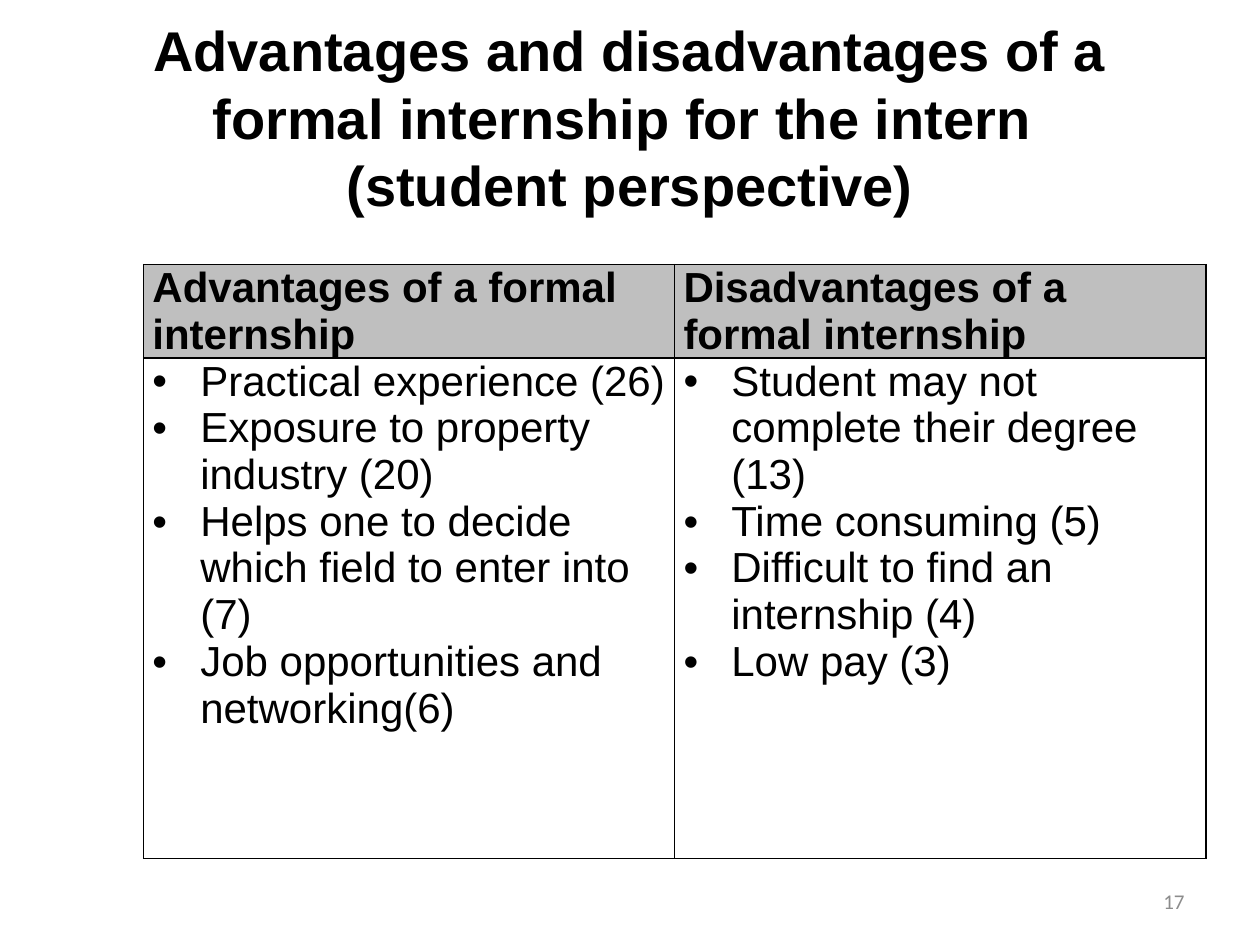
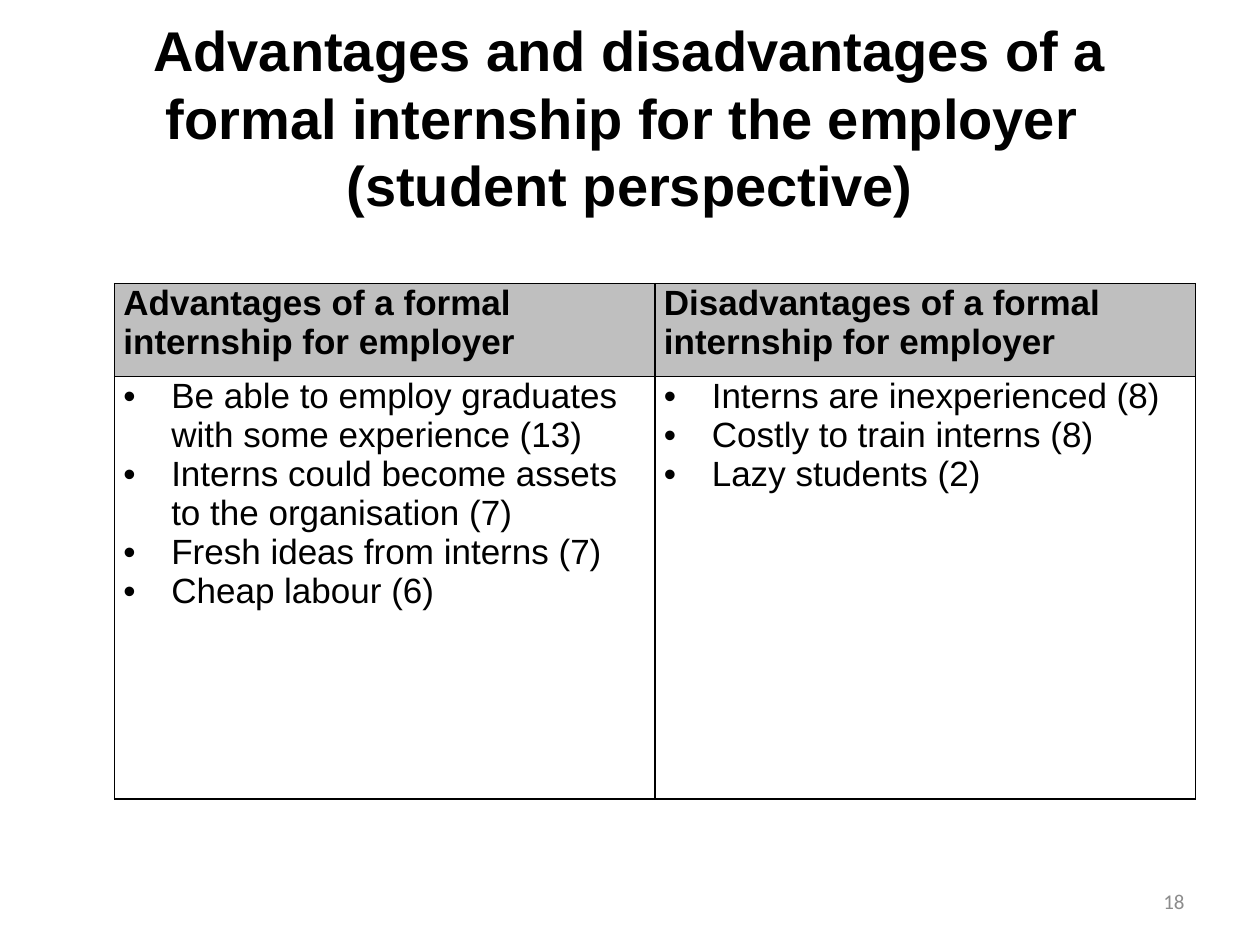
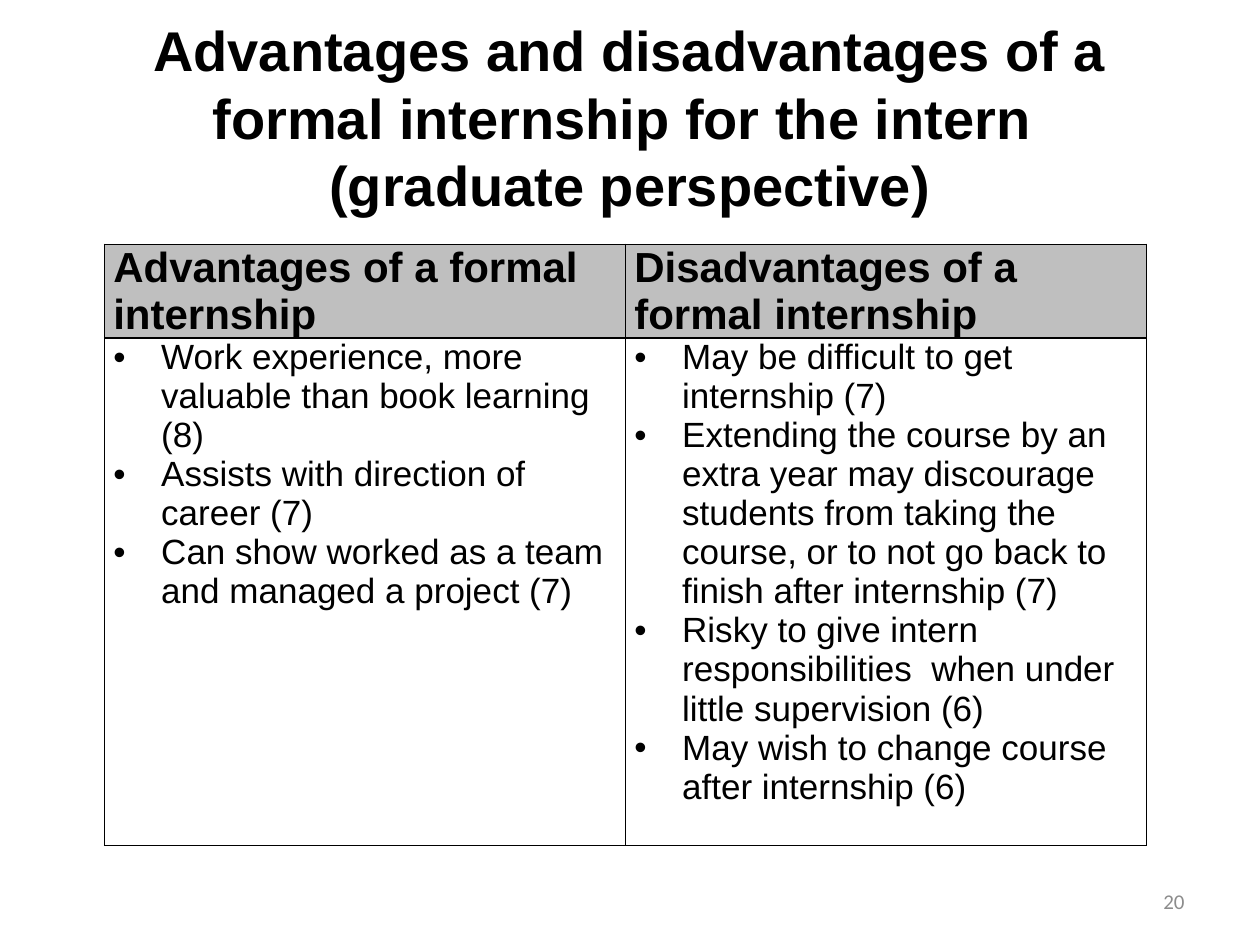
from lxml import etree
from pptx import Presentation
from pptx.dml.color import RGBColor
from pptx.enum.text import MSO_ANCHOR as ANCHOR, PP_ALIGN as ALIGN
from pptx.oxml.ns import qn
from pptx.util import Inches, Pt

BLACK = RGBColor(0x00, 0x00, 0x00)
HEADER_GREY = RGBColor(0xBF, 0xBF, 0xBF)
NUMBER_GREY = RGBColor(0x8C, 0x8C, 0x8C)

SLIDE_W, SLIDE_H = 10, 7.5
TITLE_BOX = (0.5, 0.3, 9, 1.25)
NUMBER_BOX = (7.17, 6.95, 2.33, 0.4)
HEADER_H = 0.74
CELL_INSET = 0.07
BULLET_INDENT = 0.38
TITLE_PITCH, TABLE_PITCH = 1.205, 1.113  # line pitch as a share of the text size

# Content: one entry per slide; sizes are (header, body) in points
SLIDES = [
    {
        "number": 17, "party": "intern", "view": "student",
        "left": 1.14, "top": 2.1, "width": 8.43, "body_h": 3.97,
        "sizes": (24, 24),
        "headers": ["Advantages of a formal internship",
                    "Disadvantages of a formal internship"],
        "points": [
            ["Practical experience (26)",
             "Exposure to property industry (20)",
             "Helps one to decide which field to enter into (7)",
             "Job opportunities and networking(6)"],
            ["Student may not complete their degree (13)",
             "Time consuming (5)",
             "Difficult to find an internship (4)",
             "Low pay (3)"],
        ],
    },
    {
        "number": 18, "party": "employer", "view": "student",
        "left": 0.91, "top": 2.25, "width": 8.58, "body_h": 3.35,
        "sizes": (20, 20),
        "headers": ["Advantages of a formal internship for employer",
                    "Disadvantages of a formal internship for employer"],
        "points": [
            ["Be able to employ graduates with some experience (13)",
             "Interns could become assets to the organisation (7)",
             "Fresh ideas from interns (7)",
             "Cheap labour (6)"],
            ["Interns are inexperienced (8)",
             "Costly to train interns (8)",
             "Lazy students (2)"],
        ],
    },
    {
        "number": 20, "party": "intern", "view": "graduate",
        "left": 0.83, "top": 1.94, "width": 8.27, "body_h": 4.03,
        "sizes": (24, 20),
        "headers": ["Advantages of a formal internship",
                    "Disadvantages of a formal internship"],
        "points": [
            ["Work experience, more valuable than book learning (8)",
             "Assists with direction of career (7)",
             "Can show worked as a team and managed a project (7)"],
            ["May be difficult to get internship (7)",
             "Extending the course by an extra year may discourage students "
             "from taking the course, or to not go back to finish after "
             "internship (7)",
             "Risky to give intern responsibilities  when under little "
             "supervision (6)",
             "May wish to change course after internship (6)"],
        ],
    },
]


def write(tf, lines, size, font="Arial", color=BLACK, bold=False,
          align=ALIGN.LEFT, pitch=None, bullet=False):
    """Fill a text frame with one paragraph per line."""
    tf.word_wrap = True
    for i, line in enumerate(lines):
        p = tf.add_paragraph() if i else tf.paragraphs[0]
        p.text = line
        p.alignment = align
        if pitch:
            p.line_spacing = Pt(round(size * pitch, 1))
        if bullet:
            pPr = p._p.get_or_add_pPr()
            pPr.set("marL", str(Inches(BULLET_INDENT)))
            pPr.set("indent", str(-Inches(BULLET_INDENT)))
            etree.SubElement(pPr, qn("a:buFont")).set("typeface", "Arial")
            etree.SubElement(pPr, qn("a:buChar")).set("char", "•")
        for r in p.runs:
            r.font.name, r.font.size, r.font.bold = font, Pt(size), bold
            r.font.color.rgb = color


def add_text(s, box, text, **fmt):
    tf = s.shapes.add_textbox(*map(Inches, box)).text_frame
    tf.vertical_anchor = ANCHOR.MIDDLE
    write(tf, [text], **fmt)


def set_borders(cell):
    tcPr = cell._tc.get_or_add_tcPr()
    for i, side in enumerate(("lnL", "lnR", "lnT", "lnB")):
        ln = etree.Element(qn(f"a:{side}"), w=str(Pt(1)))
        fill = etree.SubElement(ln, qn("a:solidFill"))
        etree.SubElement(fill, qn("a:srgbClr")).set("val", str(BLACK))
        tcPr.insert(i, ln)


def format_cell(cell, lines, size, header):
    cell.margin_left = cell.margin_right = Inches(CELL_INSET)
    cell.margin_top = cell.margin_bottom = 0
    if header:
        cell.fill.solid()
        cell.fill.fore_color.rgb = HEADER_GREY
    else:
        cell.fill.background()
    set_borders(cell)
    write(cell.text_frame, lines, size, bold=header, bullet=not header,
          pitch=TABLE_PITCH)


def add_comparison(s, data):
    heights = (HEADER_H, data["body_h"])
    box = (data["left"], data["top"], data["width"], sum(heights))
    table = s.shapes.add_table(2, 2, *map(Inches, box)).table
    table.first_row = table.horz_banding = False
    for row, height in zip(table.rows, heights):
        row.height = Inches(height)
    header_size, body_size = data["sizes"]
    for col, (header, points) in enumerate(zip(data["headers"], data["points"])):
        format_cell(table.cell(0, col), [header], header_size, True)
        format_cell(table.cell(1, col), points, body_size, False)


def main():
    prs = Presentation()
    prs.slide_width, prs.slide_height = Inches(SLIDE_W), Inches(SLIDE_H)
    for data in SLIDES:
        s = prs.slides.add_slide(prs.slide_layouts[6])
        title = ("Advantages and disadvantages of a formal internship "
                 f"for the {data['party']} \v({data['view']} perspective)")
        add_text(s, TITLE_BOX, title, size=32, bold=True,
                 align=ALIGN.CENTER, pitch=TITLE_PITCH)
        add_comparison(s, data)
        add_text(s, NUMBER_BOX, str(data["number"]), size=12, font="Calibri",
                 color=NUMBER_GREY, align=ALIGN.RIGHT)
    prs.save("out.pptx")


if __name__ == "__main__":
    main()
